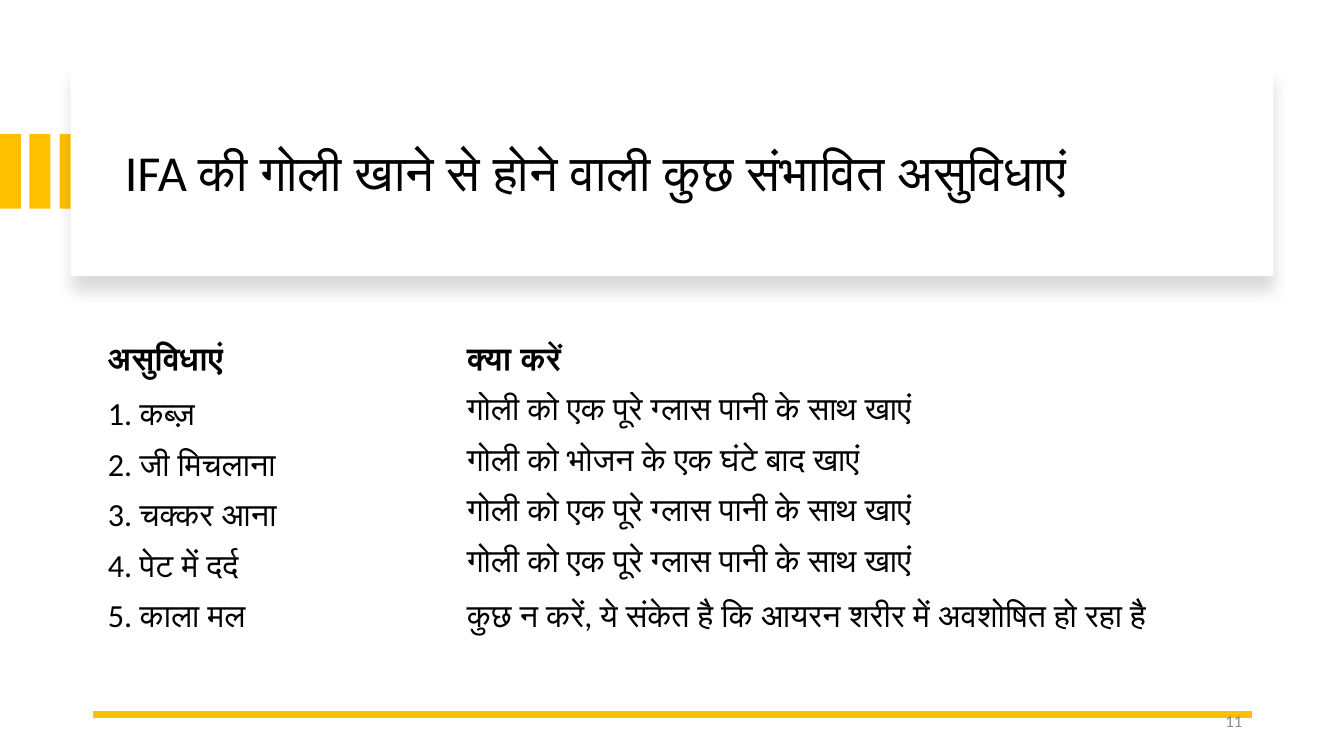
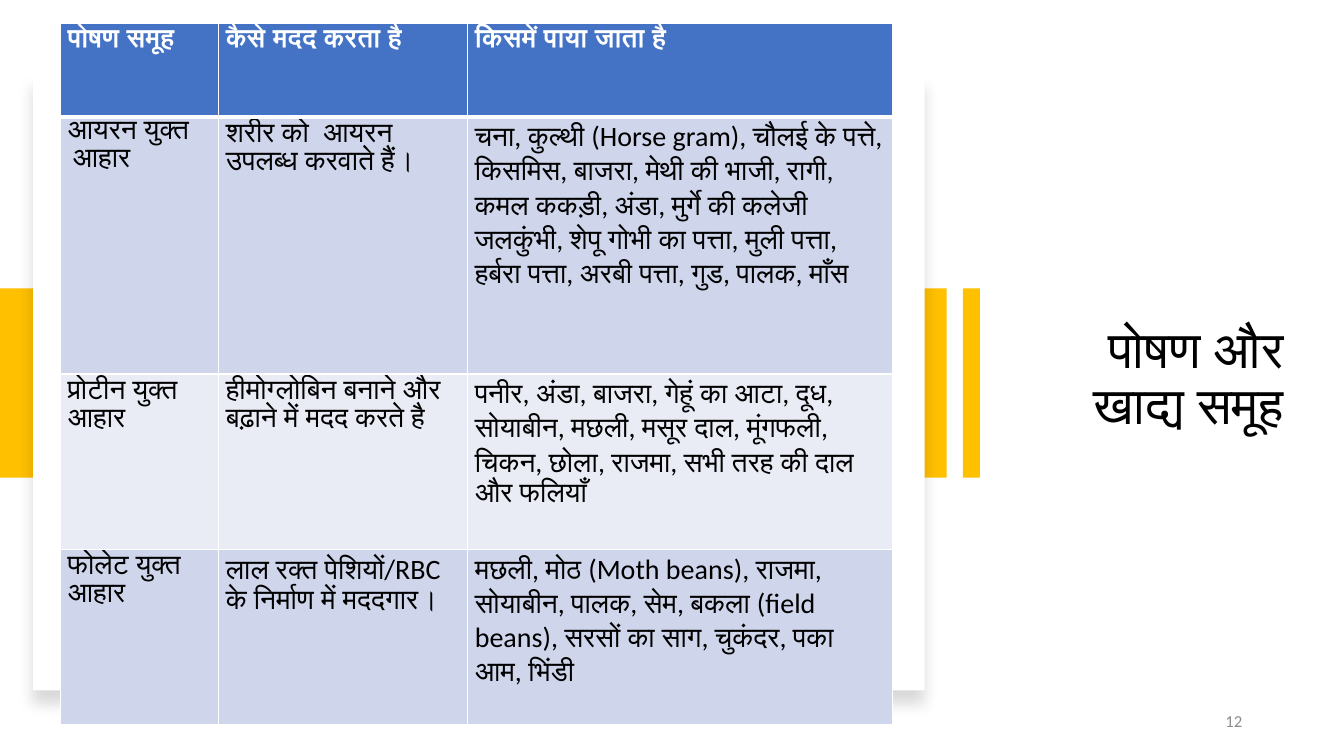
from dataclasses import dataclass

from lxml.etree import SubElement
from pptx import Presentation
from pptx.dml.color import RGBColor as Rgb
from pptx.enum.shapes import MSO_CONNECTOR as Conn, MSO_SHAPE as Shape
from pptx.enum.text import MSO_ANCHOR as Anchor, PP_ALIGN as Align
from pptx.oxml import parse_xml
from pptx.oxml.ns import nsdecls, qn
from pptx.util import Inches, Pt

FONT = "Calibri"
HUES = {
    "gold": "FFC000",
    "white": "FFFFFF",
    "black": "000000",
    "grey": "8C8C8C",
    "blue": "4472C4",
    "mist": "CFD5EA",
    "pale": "E9EBF5",
}


@dataclass(frozen=True)
class Box:
    left: float
    top: float
    width: float
    height: float

    def emu(self) -> tuple:
        return tuple(Inches(n) for n in (self.left, self.top, self.width, self.height))


@dataclass(frozen=True)
class Look:
    size: float
    head: str
    fills: tuple
    inset: tuple
    edges: bool


@dataclass(frozen=True)
class Grid:
    left: float
    top: float
    cols: tuple
    rows: tuple
    cells: tuple
    look: Look


PLAIN = Look(23, "black", (None,), (0.08, 0.04), False)
BANDS = Look(20, "white", ("mist", "pale"), (0.07, 0.03), True)

WATER = "गोली को एक पूरे ग्लास पानी के साथ खाएं"
CARE = Grid(
    0.99, 3.38, (3.56, 7.79), (0.5,) * 5 + (0.87,),
    (
        ("असुविधाएं", "क्या करें"),
        ("1. कब्ज़", WATER),
        ("2. जी मिचलाना", "गोली को भोजन के एक घंटे बाद खाएं"),
        ("3. चक्कर आना", WATER),
        ("4. पेट में दर्द", WATER),
        ("5. काला मल", "कुछ न करें, ये संकेत है कि आयरन शरीर में अवशोषित हो रहा है"),
    ),
    PLAIN,
)
FOOD = Grid(
    0.6, 0.23, (1.57, 2.47, 4.21), (0.93, 2.55, 1.74, 1.74),
    (
        ("पोषण समूह", "कैसे मदद करता है", "किसमें पाया जाता है"),
        (
            "आयरन युक्त आहार",
            "शरीर को  आयरन उपलब्ध करवाते हैं।",
            "चना, कुल्थी (Horse gram), चौलई के पत्ते, किसमिस, बाजरा, मेथी की भाजी, "
            "रागी, कमल ककड़ी, अंडा, मुर्गे की कलेजी\n"
            "जलकुंभी, शेपू गोभी का पत्ता, मुली पत्ता, हर्बरा पत्ता, अरबी पत्ता, "
            "गुड, पालक, माँस",
        ),
        (
            "प्रोटीन युक्त आहार",
            "हीमोग्लोबिन बनाने और बढ़ाने में मदद करते है",
            "पनीर, अंडा, बाजरा, गेहूं का आटा, दूध, सोयाबीन, मछली, मसूर दाल, "
            "मूंगफली, चिकन, छोला, राजमा, सभी तरह की दाल और फलियाँ",
        ),
        (
            "फोलेट युक्त आहार",
            "लाल रक्त पेशियों/RBC के निर्माण में मददगार।",
            "मछली, मोठ (Moth beans), राजमा, सोयाबीन, पालक, सेम, बकला (field beans), "
            "सरसों का साग, चुकंदर, पका आम, भिंडी",
        ),
    ),
    BANDS,
)


def hue(name: str) -> Rgb:
    return Rgb.from_string(HUES[name])


def style(font, size: float, name: str, bold: bool = False) -> None:
    font.name = FONT
    font.size = Pt(size)
    font.bold = bold
    font.color.rgb = hue(name)


def block(slide, box: Box, name: str):
    shape = slide.shapes.add_shape(Shape.RECTANGLE, *box.emu())
    shape.shadow.inherit = False
    shape.fill.solid()
    shape.fill.fore_color.rgb = hue(name)
    shape.line.fill.background()
    return shape


def panel(slide, box: Box) -> None:
    shape = block(slide, box, "white")
    glow = shape.element.spPr.find(qn("a:effectLst"))
    glow.append(parse_xml(
        f'<a:outerShdw {nsdecls("a")} blurRad="{Pt(11)}" dist="{Pt(10)}" '
        f'dir="5400000" algn="t" rotWithShape="0"><a:srgbClr val="{HUES["black"]}">'
        '<a:alpha val="15000"/></a:srgbClr></a:outerShdw>'
    ))


def label(slide, box: Box, text: str, size: float, name: str = "black",
          align: Align = Align.RIGHT, space: float = 1.0) -> None:
    frame = slide.shapes.add_textbox(*box.emu()).text_frame
    frame.word_wrap = True
    frame.vertical_anchor = Anchor.MIDDLE
    para = frame.paragraphs[0]
    para.text = text
    para.alignment = align
    para.line_spacing = space
    style(para.font, size, name)


def title(slide, box: Box, text: str, size: float, align: Align) -> None:
    label(slide, box, text, size, align=align, space=0.9)


def page(slide, num: int) -> None:
    label(slide, Box(9.42, 6.95, 3, 0.4), str(num), 12, "grey")


def rule(slide, left: float, right: float, top: float) -> None:
    ends = (Inches(n) for n in (left, top, right, top))
    line = slide.shapes.add_connector(Conn.STRAIGHT, *ends)
    line.line.color.rgb = hue("gold")
    line.line.width = Pt(4.5)
    SubElement(line.element.spPr, qn("a:effectLst"))


def edge(cell, first: bool, second: bool) -> None:
    widths = {"lnL": 1, "lnR": 1, "lnT": 3 if second else 1, "lnB": 3 if first else 1}
    props = cell._tc.get_or_add_tcPr()
    for spot, (tag, width) in enumerate(widths.items()):
        props.insert(spot, parse_xml(
            f'<a:{tag} {nsdecls("a")} w="{Pt(width)}"><a:solidFill>'
            f'<a:srgbClr val="{HUES["white"]}"/></a:solidFill></a:{tag}>'
        ))


def fill(cell, name: str | None) -> None:
    if name is None:
        cell.fill.background()
    else:
        cell.fill.solid()
        cell.fill.fore_color.rgb = hue(name)


def table(slide, grid: Grid):
    look = grid.look
    box = Box(grid.left, grid.top, sum(grid.cols), sum(grid.rows))
    made = slide.shapes.add_table(len(grid.rows), len(grid.cols), *box.emu()).table
    made.first_row = made.horz_banding = False
    for col, width in zip(made.columns, grid.cols):
        col.width = Inches(width)
    for row, height in zip(made.rows, grid.rows):
        row.height = Inches(height)
    side, rim = (Inches(n) for n in look.inset)
    for r, texts in enumerate(grid.cells):
        head = r == 0
        size = 19 if head and look.edges else look.size
        shade = look.fills[(r - 1) % len(look.fills)]
        for c, text in enumerate(texts):
            cell = made.cell(r, c)
            cell.text = text
            cell.margin_left = cell.margin_right = side
            cell.margin_top = cell.margin_bottom = rim
            fill(cell, "blue" if head and look.edges else shade)
            if look.edges:
                edge(cell, head, r == 1)
            for para in cell.text_frame.paragraphs:
                style(para.font, size, look.head if head else "black", head)
    return made


def care(slide) -> None:
    for step in range(3):
        block(slide, Box(round(step * 0.295, 2), 1.33, 0.21, 0.74), "gold")
    panel(slide, Box(0.7, 0.67, 11.93, 2.07))
    title(slide, Box(1.14, 0.89, 11.13, 1.7),
          "IFA की गोली खाने से होने वाली कुछ संभावित असुविधाएं", 36, Align.LEFT)
    rule(slide, 0.92, 12.42, 7.09)
    table(slide, CARE)


def food(slide) -> None:
    title(slide, Box(10.6, 2.21, 2.23, 3.11), "पोषण और खाद्य समूह", 37, Align.RIGHT)
    block(slide, Box(0, 2.86, 9.39, 1.88), "gold")
    panel(slide, Box(0.33, 0.73, 8.84, 6.12))
    block(slide, Box(9.55, 2.86, 0.17, 1.88), "gold")
    made = table(slide, FOOD)
    iron = made.cell(1, 0)
    iron.margin_top = iron.margin_bottom = 0
    props = iron.text_frame.paragraphs[0]._p.get_or_add_pPr()
    props.set("marL", str(Inches(0.05)))
    props.set("indent", str(Inches(-0.05)))


def main() -> None:
    deck = Presentation()
    deck.slide_width, deck.slide_height = Inches(13.33), Inches(7.5)
    for num, draw in enumerate((care, food), 11):
        slide = deck.slides.add_slide(deck.slide_layouts[6])
        draw(slide)
        page(slide, num)
    deck.save("out.pptx")


if __name__ == "__main__":
    main()
